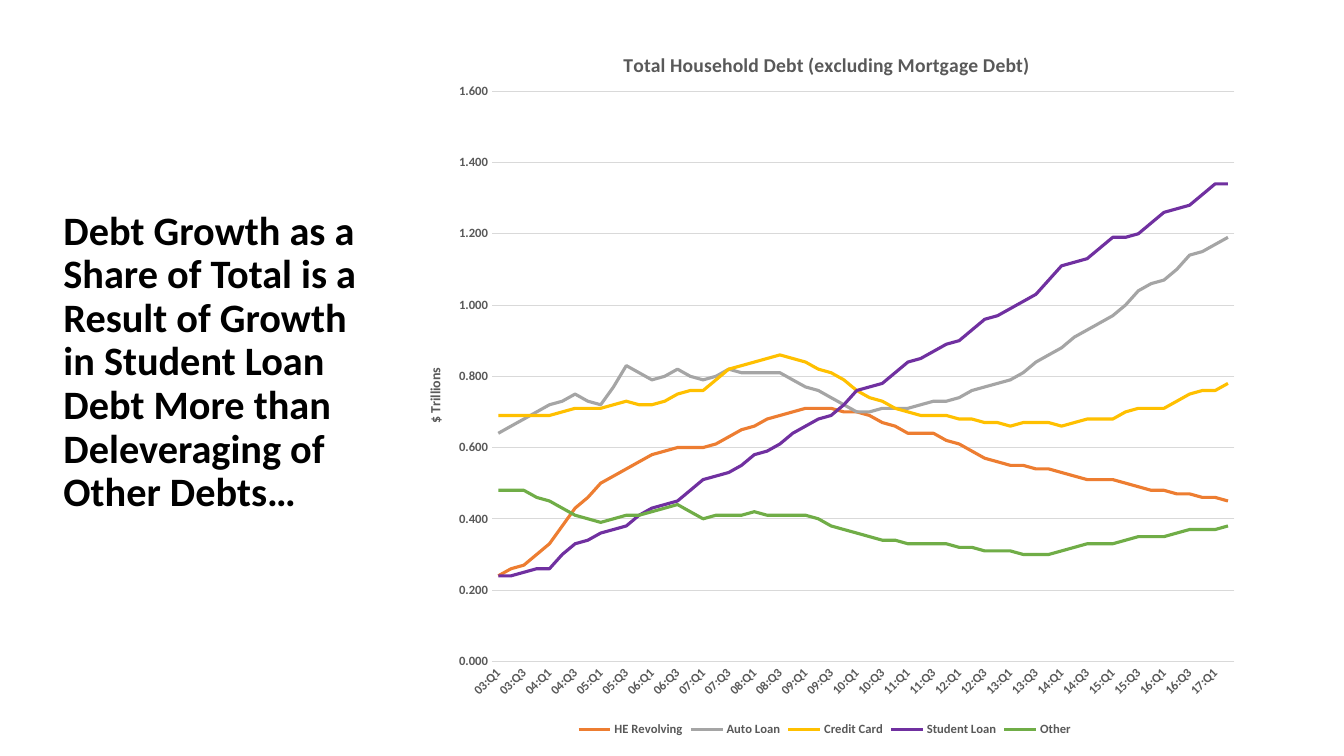
from lxml import etree
from pptx import Presentation
from pptx import util as u
from pptx.chart.data import CategoryChartData
from pptx.dml.color import RGBColor
from pptx.enum import chart as charts, text
from pptx.oxml.ns import qn

COLORS = {
    "title": "000000", "label": "595959", "grid": "D9D9D9",
    "HE Revolving": "ED7D31", "Auto Loan": "A5A5A5", "Credit Card": "FFC000",
    "Student Loan": "7030A0", "Other": "70AD47",
}

# Debt in trillions of dollars: first and third quarters from 2003, then 2017 Q2
DEBT = {
    "HE Revolving": [
        0.24, 0.27, 0.33, 0.43, 0.5, 0.54, 0.58, 0.6, 0.6, 0.63,
        0.66, 0.69, 0.71, 0.71, 0.7, 0.67, 0.64, 0.64, 0.61, 0.57,
        0.55, 0.54, 0.53, 0.51, 0.51, 0.49, 0.48, 0.47, 0.46, 0.45],
    "Auto Loan": [
        0.64, 0.68, 0.72, 0.75, 0.72, 0.83, 0.79, 0.82, 0.79, 0.82,
        0.81, 0.81, 0.77, 0.74, 0.7, 0.71, 0.71, 0.73, 0.74, 0.77,
        0.79, 0.84, 0.88, 0.93, 0.97, 1.04, 1.07, 1.14, 1.17, 1.19],
    "Credit Card": [
        0.69, 0.69, 0.69, 0.71, 0.71, 0.73, 0.72, 0.75, 0.76, 0.82,
        0.84, 0.86, 0.84, 0.81, 0.76, 0.73, 0.7, 0.69, 0.68, 0.67,
        0.66, 0.67, 0.66, 0.68, 0.68, 0.71, 0.71, 0.75, 0.76, 0.78],
    "Student Loan": [
        0.24, 0.25, 0.26, 0.33, 0.36, 0.38, 0.43, 0.45, 0.51, 0.53,
        0.58, 0.61, 0.66, 0.69, 0.76, 0.78, 0.84, 0.87, 0.9, 0.96,
        0.99, 1.03, 1.11, 1.13, 1.19, 1.2, 1.26, 1.28, 1.34, 1.34],
    "Other": [
        0.48, 0.48, 0.45, 0.41, 0.39, 0.41, 0.42, 0.44, 0.4, 0.41,
        0.42, 0.41, 0.41, 0.38, 0.36, 0.34, 0.33, 0.33, 0.32, 0.31,
        0.31, 0.3, 0.31, 0.33, 0.33, 0.35, 0.35, 0.37, 0.37, 0.38],
}
QUARTERS = [f"{year:02d}:Q{q}" for year in range(3, 18) for q in range(1, 5)][:-2]


def style_font(font, size, color="label"):
    font.name, font.size, font.bold = "Calibri", u.Pt(size), True
    font.color.rgb = RGBColor.from_string(COLORS[color])


def place(element, index, **settings):
    """Give a chart part a manual layout, in fractions of the chart."""
    for old in element.findall(qn("c:layout")):
        element.remove(old)
    layout = etree.Element(qn("c:layout"))
    manual = etree.SubElement(layout, qn("c:manualLayout"))
    for name, value in settings.items():
        etree.SubElement(manual, qn(f"c:{name}")).set("val", str(value))
    element.insert(index, layout)


presentation = Presentation()
presentation.slide_width, presentation.slide_height = u.Cm(33.87), u.Cm(19.05)
slide = presentation.slides.add_slide(presentation.slide_layouts[6])

# Headline
headline = slide.shapes.add_textbox(u.Cm(1.35), u.Cm(3.28), u.Cm(8.2), u.Cm(9.83))
frame = headline.text_frame
frame.word_wrap = True
frame.vertical_anchor = text.MSO_ANCHOR.BOTTOM
paragraph = frame.paragraphs[0]
paragraph.line_spacing = 0.9
run = paragraph.add_run()
run.text = ("Debt Growth as a Share of Total is a Result of Growth in Student "
            "Loan Debt More than Deleveraging of Other Debts…")
style_font(run.font, 28.8, "title")

# Line chart: quarters in between are the mean of their neighbours
data = CategoryChartData(number_format="0.000")
data.categories = QUARTERS
for name, points in DEBT.items():
    *half_years, latest = points
    values = []
    for current, following in zip(half_years, half_years[1:]):
        values += [current, round((current + following) / 2, 2)]
    data.add_series(name, values + [half_years[-1], latest])
chart = slide.shapes.add_chart(
    charts.XL_CHART_TYPE.LINE, u.Cm(10.03), u.Cm(0.48), u.Cm(21.51), u.Cm(18.19), data).chart
chart.font.name, chart.font.size = "Calibri", u.Pt(10)
chart.plots[0].vary_by_categories = False
for series in chart.plots[0].series:
    series.smooth = False
    series.marker.style = charts.XL_MARKER_STYLE.NONE
    series.format.line.width = u.Pt(2.25)
    series.format.line.color.rgb = RGBColor.from_string(COLORS[series.name])

# Axes and gridlines
quarters, trillions = chart.category_axis, chart.value_axis
for axis in (quarters, trillions):
    axis.major_tick_mark = axis.minor_tick_mark = charts.XL_TICK_MARK.NONE
    style_font(axis.tick_labels.font, 9)
trillions.minimum_scale, trillions.maximum_scale, trillions.major_unit = 0, 1.6, 0.2
trillions.tick_labels.number_format = "0.000"
trillions.tick_labels.number_format_is_linked = False
trillions.format.line.fill.background()
for line in (quarters.format.line, trillions.major_gridlines.format.line):
    line.width = u.Pt(0.75)
    line.color.rgb = RGBColor.from_string(COLORS["grid"])

# Chart title and axis title
for title, wording, size in (
        (chart.chart_title, "Total Household Debt (excluding Mortgage Debt)", 14),
        (trillions.axis_title, "$ Trillions", 10)):
    run = title.text_frame.paragraphs[0].add_run()
    run.text = wording
    style_font(run.font, size)

# Legend
chart.has_legend = True
chart.legend.position = charts.XL_LEGEND_POSITION.BOTTOM
chart.legend.include_in_layout = False
style_font(chart.legend.font, 9)

# Slanted quarter labels, every second one shown; upright axis title
for query, angle in (("//c:catAx/c:txPr/a:bodyPr", -45), ("//c:valAx/c:title//a:bodyPr", -90)):
    body = chart.element.xpath(query)[0]
    body.set("rot", str(angle * 60000))
    body.set("vert", "horz")
label_skip = etree.Element(qn("c:tickLblSkip"))
label_skip.set("val", "2")
chart.element.xpath("//c:catAx/c:noMultiLvlLbl")[0].addprevious(label_skip)

# Positions inside the chart
place(chart.element.xpath("//c:plotArea")[0], 0, layoutTarget="inner",
      xMode="edge", yMode="edge", x=0.11, y=0.1, w=0.87, h=0.79)
for query, x, y in (("//c:chart/c:title", 0.26, 0.04), ("//c:valAx/c:title", 0.03, 0.48)):
    place(chart.element.xpath(query)[0], 1, xMode="edge", yMode="edge", x=x, y=y)

presentation.save("out.pptx")
